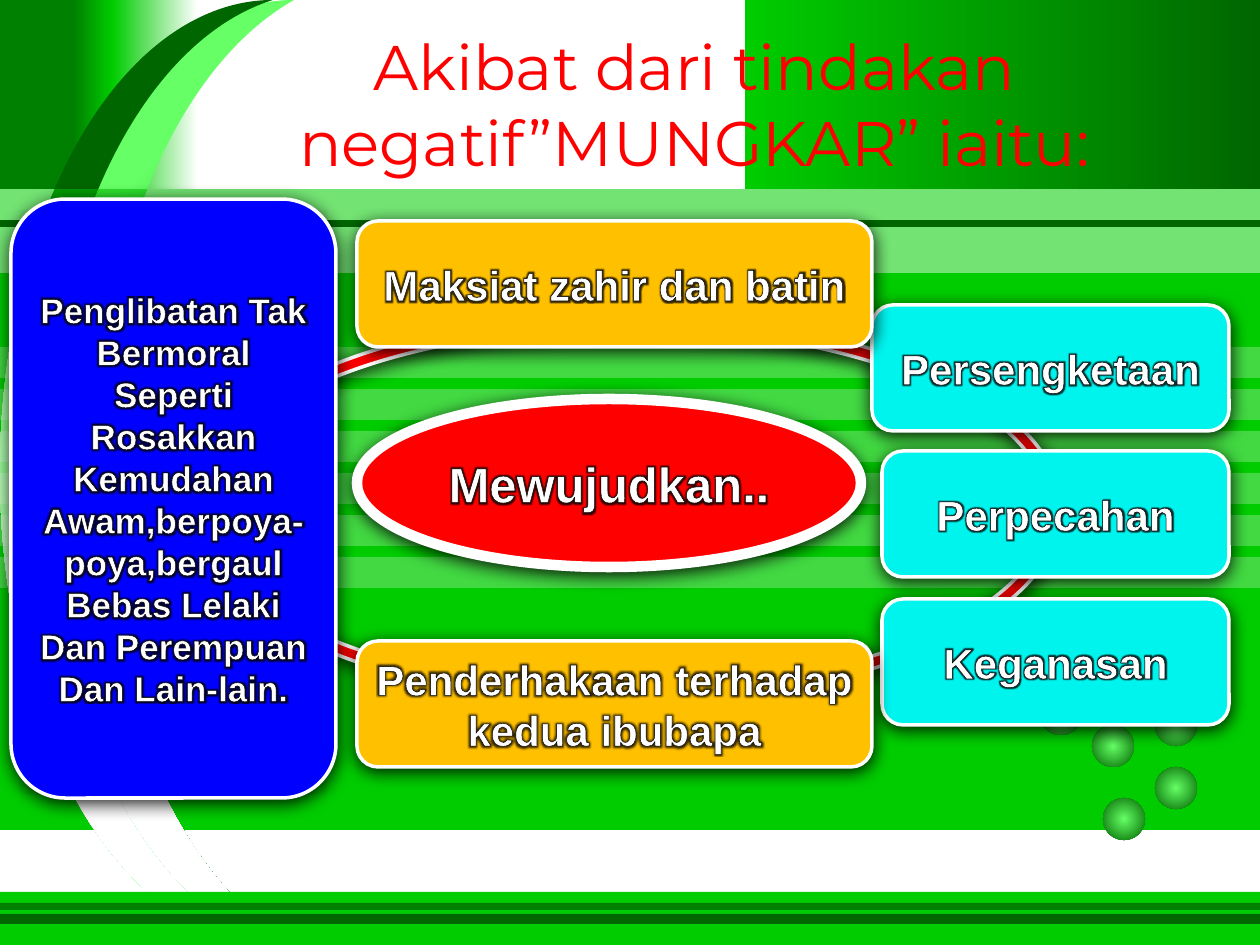
"""Build a slide on the consequences of wrongdoing, arranged around a central ellipse."""
import pptx
import pptx.util
import pptx.dml.color
import pptx.enum.shapes
import pptx.enum.text
import pptx.oxml
import pptx.oxml.ns

PX = 914400 / 126
MSO = pptx.enum.shapes.MSO_SHAPE
NS = pptx.oxml.ns.nsdecls("a")
GREEN, DARK, MID, LIGHT, WHITE = "00CC00", "006600", "008000", "66FF66", "FFFFFF"
RED, AMBER, CYAN, BLUE = "FF0000", "FFC000", "00F4EE", "0000FF"

BACK_PANELS = [
    ((0, 273, 1260, 557), [(0, GREEN), (100, GREEN)]),
    ((231, 0, 1029, 189), [(50, WHITE), (50, GREEN), (100, DARK)]),
    ((0, 0, 305, 189), [(24, MID), (37, GREEN), (65, WHITE)]),
]
MOONS = [
    ((21, 0, 273, 945), 0.274, [(24, LIGHT), (50, MID), (65, WHITE)]),
    ((0, 0, 273, 945), 0.164, [(24, DARK), (24, LIGHT), (65, WHITE)]),
]
BANDS = [(189, 84, GREEN, 55), (220, 7, DARK, 100)]
BANDS += [(347 + 42 * i, 31, WHITE, 26) for i in range(6)]
BANDS += [(892, 53, GREEN, 100), (903, 7, MID, 100), (914, 10, DARK, 100)]
BALLS = [(1071, 599), (1040, 693), (1103, 798), (1155, 704), (1092, 725), (1155, 767)]
BALL_SIZE = 42

TITLE = "Akibat dari tindakan negatif”MUNGKAR” iaitu:"
TITLE_BOX = (189, 21, 1011, 165)
RING_BOX = (189, 315, 872, 388)
CARDS = [
    (MSO.ROUNDED_RECTANGLE, (872, 305, 357, 126), CYAN, 2, 24, "Persengketaan"),
    (MSO.ROUNDED_RECTANGLE, (882, 451, 347, 126), CYAN, 2, 24, "Perpecahan"),
    (MSO.ROUNDED_RECTANGLE, (882, 599, 347, 126), CYAN, 2, 24, "Keganasan"),
    (MSO.ROUNDED_RECTANGLE, (357, 221, 515, 126), AMBER, 2, 24, "Maksiat zahir dan batin"),
    (MSO.OVAL, (357, 399, 504, 168), RED, 6, 28, "Mewujudkan.."),
    (MSO.ROUNDED_RECTANGLE, (357, 641, 515, 126), AMBER, 2, 24,
     "Penderhakaan terhadap kedua ibubapa"),
    (MSO.ROUNDED_RECTANGLE, (11, 199, 325, 599), BLUE, 2, 20,
     "Penglibatan Tak Bermoral Seperti Rosakkan Kemudahan Awam,berpoya-poya,bergaul "
     "Bebas Lelaki Dan Perempuan Dan Lain-lain."),
]


def rgb(value):
    return pptx.dml.color.RGBColor.from_string(value)


def emu(box):
    return [round(v * PX) for v in box]


def xml(body):
    return pptx.oxml.parse_xml(body.replace(">", f" {NS}>", 1))


def add_shape(shapes, kind, box, fill=None, line=None, adj=None):
    sp = shapes.add_shape(kind, *emu(box))
    sp.shadow.inherit = False
    if fill:
        sp.fill.solid()
        sp.fill.fore_color.rgb = rgb(fill)
    if line:
        sp.line.color.rgb = rgb(WHITE)
        sp.line.width = pptx.util.Pt(line)
    else:
        sp.line.fill.background()
    if adj is not None:
        sp.adjustments[0] = adj
    return sp


def set_gradient(sp, stops, direction):
    stop_xml = "".join(f'<a:gs pos="{pos * 1000}"><a:srgbClr val="{color}"/></a:gs>'
                       for pos, color in stops)
    geometry = sp._element.spPr.find(pptx.oxml.ns.qn("a:prstGeom"))
    geometry.addnext(xml(f"<a:gradFill><a:gsLst>{stop_xml}</a:gsLst>{direction}</a:gradFill>"))


def linear(angle):
    return f'<a:lin ang="{angle * 60000}" scaled="0"/>'


def set_alpha(sp, percent):
    color = sp._element.spPr.find(".//" + pptx.oxml.ns.qn("a:srgbClr"))
    color.append(xml(f'<a:alpha val="{percent * 1000}"></a:alpha>'))


def add_shadow(sp):
    effects = sp._element.spPr.find(pptx.oxml.ns.qn("a:effectLst"))
    effects.append(xml('<a:outerShdw blurRad="127000" dist="25400" dir="5400000" algn="ctr" '
                       'rotWithShape="0"><a:srgbClr val="000000"><a:alpha val="85000"/>'
                       '</a:srgbClr></a:outerShdw>'))


def set_text(tf, text, size, font, color, bold=False, glow=False):
    tf.word_wrap = True
    tf.auto_size = pptx.enum.text.MSO_AUTO_SIZE.NONE
    tf.vertical_anchor = pptx.enum.text.MSO_ANCHOR.MIDDLE
    p = tf.paragraphs[0]
    p.alignment = pptx.enum.text.PP_ALIGN.CENTER
    r = p.add_run()
    r.text = text
    r.font.size = pptx.util.Pt(size)
    r.font.name = font
    r.font.bold = bold
    r.font.color.rgb = rgb(color)
    fill = r.font._element.find(pptx.oxml.ns.qn("a:solidFill"))
    if glow:
        fill.addnext(xml('<a:effectLst><a:glow rad="50800"><a:srgbClr val="000000">'
                         '<a:alpha val="80000"/></a:srgbClr></a:glow></a:effectLst>'))
    fill.addprevious(xml('<a:ln w="9525"><a:solidFill><a:srgbClr val="000000"/>'
                         '</a:solidFill></a:ln>'))


def add_background(slide):
    shapes = slide.shapes.add_group_shape().shapes
    for box, stops in BACK_PANELS:
        set_gradient(add_shape(shapes, MSO.RECTANGLE, box), stops, linear(0))
    for box, adj, stops in MOONS:
        set_gradient(add_shape(shapes, MSO.MOON, box, adj=adj), stops, linear(45))
    for top, height, color, opacity in BANDS:
        sp = add_shape(shapes, MSO.RECTANGLE, (0, top, 1260, height), color)
        if opacity < 100:
            set_alpha(sp, opacity)
    radial = '<a:path path="circle"><a:fillToRect l="50000" t="50000" r="50000" b="50000"/></a:path>'
    for left, top in BALLS:
        sp = add_shape(shapes, MSO.FLOWCHART_CONNECTOR, (left, top, BALL_SIZE, BALL_SIZE))
        set_gradient(sp, [(0, LIGHT), (100, DARK)], radial)


def main():
    prs = pptx.Presentation()
    prs.slide_width, prs.slide_height = emu((1260, 945))
    slide = prs.slides.add_slide(prs.slide_layouts[5])
    add_background(slide)

    title = slide.shapes.title
    slide.shapes._spTree.append(title._element)
    title.left, title.top, title.width, title.height = emu(TITLE_BOX)
    set_text(title.text_frame, TITLE, 36, "Montserrat", RED)

    add_shadow(add_shape(slide.shapes, MSO.DONUT, RING_BOX, RED, 2, 0.033))
    for kind, box, fill, line, size, text in CARDS:
        sp = add_shape(slide.shapes, kind, box, fill, line)
        add_shadow(sp)
        set_text(sp.text_frame, text, size, "Arial", WHITE, bold=True, glow=True)

    prs.save("out.pptx")


if __name__ == "__main__":
    main()
